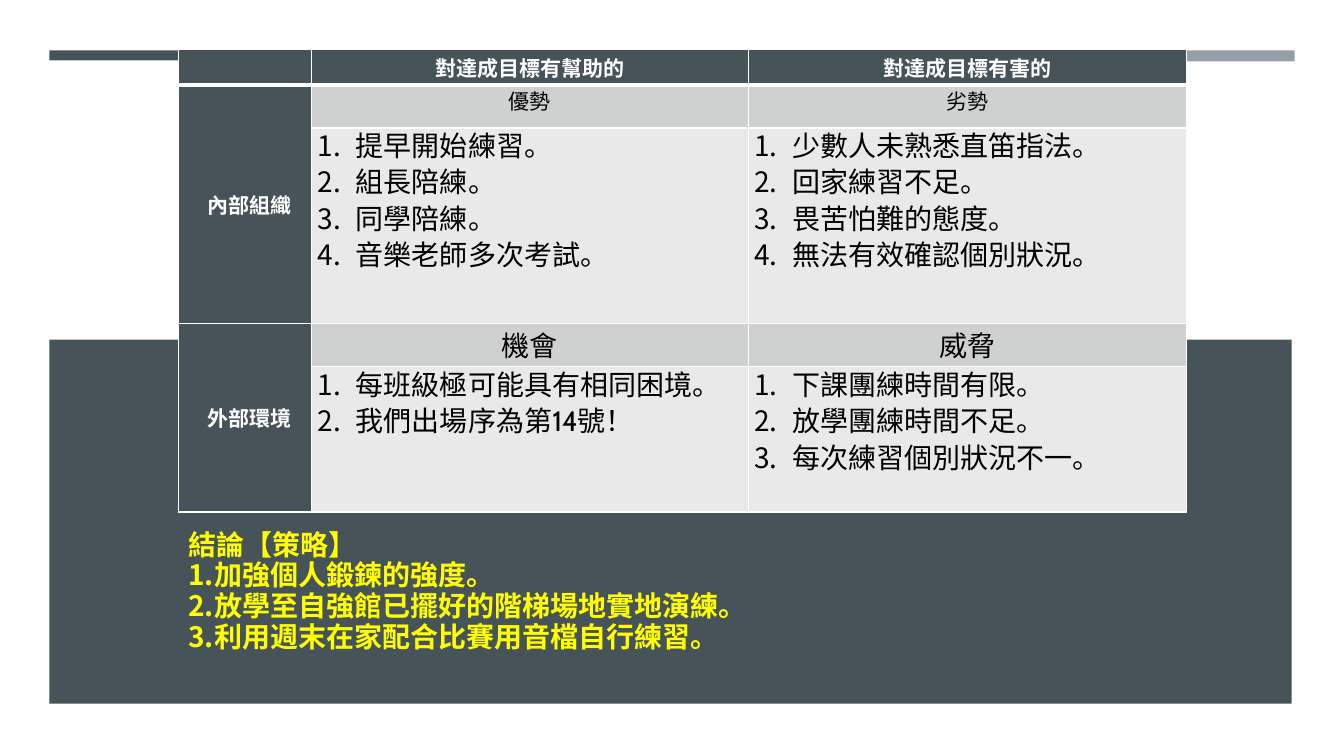
from lxml.etree import SubElement
from pptx import Presentation
from pptx.dml.color import RGBColor
from pptx.enum.shapes import MSO_SHAPE
from pptx.enum.text import MSO_ANCHOR, MSO_AUTO_SIZE, PP_ALIGN
from pptx.oxml.ns import qn
from pptx.util import Inches, Pt

SLATE, GREY, WHITE, BLACK, YELLOW = "465359", "969FA7", "FFFFFF", "000000", "FFFF00"
BAND, BODY = "CFD1D1", "E9E9EA"
LATIN, CJK, NOTE_FONT = "Cabin", "Noto Sans CJK TC", "Calibri"

BLOCKS = [
    (0.49, 0.5, 4.05, 0.1, SLATE),
    (8.79, 0.5, 4.05, 0.11, GREY),
    (0.49, 3.37, 12.32, 3.61, SLATE),
]
COLUMNS = [1.32, 4.33, 4.35]
ROWS = [0.35, 0.43, 1.94, 0.43, 1.44]
HEADINGS = ["對達成目標有幫助的", "對達成目標有害的"]
SECTIONS = [
    ("內部組織", 15, [
        ("優勢", ["提早開始練習。", "組長陪練。", "同學陪練。", "音樂老師多次考試。"]),
        ("劣勢", ["少數人未熟悉直笛指法。", "回家練習不足。", "畏苦怕難的態度。",
                "無法有效確認個別狀況。"]),
    ]),
    ("外部環境", 20, [
        ("機會", ["每班級極可能具有相同困境。", "我們出場序為第14號！"]),
        ("威脅", ["下課團練時間有限。", "放學團練時間不足。", "每次練習個別狀況不一。"]),
    ]),
]
CONCLUSION = "結論【策略】"
STRATEGIES = ["加強個人鍛鍊的強度。", "放學至自強館已擺好的階梯場地實地演練。",
              "利用週末在家配合比賽用音檔自行練習。"]


def color(code):
    return RGBColor.from_string(code)


def add_span(para, text, code, **font_values):
    span = para.add_run()
    span.text = text
    for name, value in font_values.items():
        setattr(span.font, name, value)
    span.font.color.rgb = color(code)
    SubElement(span.font._element, qn("a:ea"), typeface=CJK)


def indent(para, left, first=0):
    props = para._p.get_or_add_pPr()
    props.set("marL", str(Inches(left)))
    props.set("indent", str(Inches(first)))
    return props


def style_cell(cell, fill, top=1, bottom=1, anchor=MSO_ANCHOR.TOP):
    values = dict(margin_left=Inches(0.06), margin_right=Inches(0.06),
                  margin_top=0, margin_bottom=0, vertical_anchor=anchor)
    for name, value in values.items():
        setattr(cell, name, value)
    props = cell._tc.get_or_add_tcPr()
    for side, width in zip("LRTB", (1, 1, top, bottom)):
        line = SubElement(props, qn(f"a:ln{side}"), w=str(Pt(width)))
        SubElement(SubElement(line, qn("a:solidFill")), qn("a:srgbClr"), val=WHITE)
    cell.fill.solid()
    cell.fill.fore_color.rgb = color(fill)


def write_title(cell, text, code, size, bold):
    para = cell.text_frame.paragraphs[0]
    para.alignment = PP_ALIGN.CENTER
    add_span(para, text, code, size=Pt(size), bold=bold, name=LATIN)
    return para


def write_list(cell, items):
    frame = cell.text_frame
    for index, item in enumerate(items):
        para = frame.add_paragraph() if index else frame.paragraphs[0]
        para.line_spacing = Pt(26)
        SubElement(indent(para, 0.38, -0.38), qn("a:buAutoNum"), type="arabicPeriod")
        add_span(para, item, BLACK, size=Pt(20), bold=False, name=LATIN)


def add_swot_table(page):
    frame = page.shapes.add_table(len(ROWS), len(COLUMNS), Inches(1.77), Inches(0.49),
                                  Inches(sum(COLUMNS)), Inches(sum(ROWS)))
    table = frame.table
    table.first_row = table.horz_banding = False
    for column, width in zip(table.columns, COLUMNS):
        column.width = Inches(width)
    for row, height in zip(table.rows, ROWS):
        row.height = Inches(height)

    for column in range(len(COLUMNS)):
        style_cell(table.cell(0, column), SLATE, bottom=3, anchor=MSO_ANCHOR.MIDDLE)
    corner = table.cell(0, 0).text_frame.paragraphs[0]
    SubElement(corner._p, qn("a:endParaRPr"), sz="1500")
    for column, heading in enumerate(HEADINGS, 1):
        write_title(table.cell(0, column), heading, WHITE, 15, True)

    for section, (label, size, quadrants) in enumerate(SECTIONS):
        top = 1 + 2 * section
        edge = 1 if section else 3
        side = table.cell(top, 0)
        side.merge(table.cell(top + 1, 0))
        style_cell(side, SLATE, top=edge, anchor=MSO_ANCHOR.MIDDLE)
        style_cell(table.cell(top + 1, 0), SLATE)
        side._tc.get_or_add_tcPr().set("vert", "eaVert")
        indent(write_title(side, label, WHITE, 15, True), 0.08)
        for column, (title, items) in enumerate(quadrants, 1):
            band, body = table.cell(top, column), table.cell(top + 1, column)
            style_cell(band, BAND, top=edge)
            write_title(band, title, BLACK, size, False)
            style_cell(body, BODY)
            write_list(body, items)


def add_conclusion(page):
    box = page.shapes.add_textbox(Inches(1.77), Inches(5.18), Inches(6.67), Inches(1.36))
    frame = box.text_frame
    frame.word_wrap = True
    frame.auto_size = MSO_AUTO_SIZE.SHAPE_TO_FIT_TEXT
    bold = dict(size=Pt(20), bold=True)
    add_span(frame.paragraphs[0], CONCLUSION, YELLOW, name=NOTE_FONT, **bold)
    for number, strategy in enumerate(STRATEGIES, 1):
        para = frame.add_paragraph()
        para.line_spacing = Pt(22)
        add_span(para, f"{number}.", YELLOW, name=CJK, **bold)
        add_span(para, strategy, YELLOW, name=NOTE_FONT, **bold)


def main():
    deck = Presentation()
    deck.slide_width, deck.slide_height = Inches(13.33), Inches(7.5)
    page = deck.slides.add_slide(deck.slide_layouts[6])
    for *place, fill in BLOCKS:
        block = page.shapes.add_shape(MSO_SHAPE.RECTANGLE, *map(Inches, place))
        block.shadow.inherit = False
        block.fill.solid()
        block.fill.fore_color.rgb = color(fill)
        block.line.fill.background()
    add_swot_table(page)
    add_conclusion(page)
    deck.save("out.pptx")


if __name__ == "__main__":
    main()
